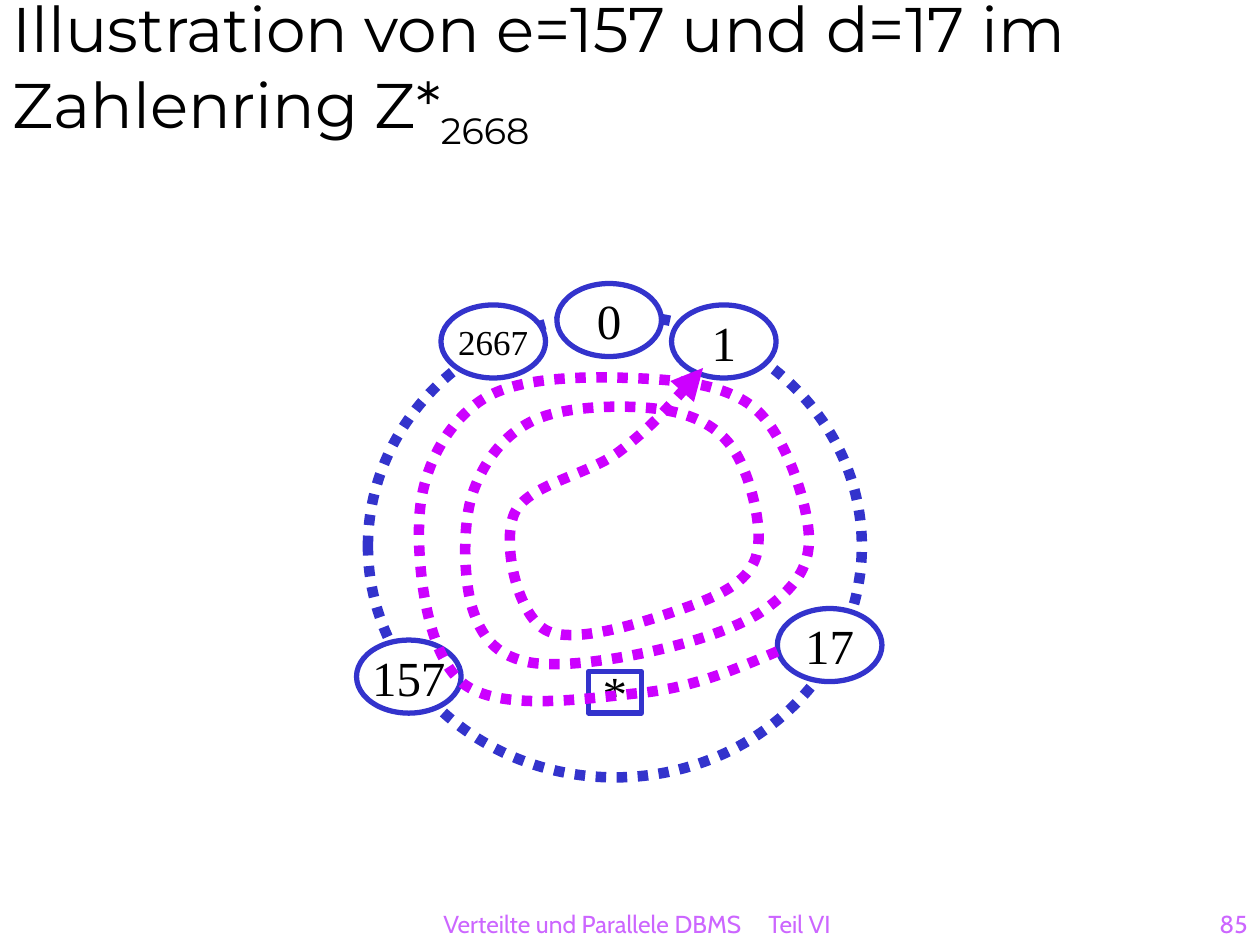
from dataclasses import dataclass

from pptx import Presentation
from pptx.dml.color import RGBColor
from pptx.enum.dml import MSO_LINE
from pptx.enum.shapes import MSO_SHAPE
from pptx.enum.text import MSO_ANCHOR, PP_ALIGN
from pptx.oxml.ns import qn
from pptx.util import Inches, Pt
from lxml.etree import SubElement

BLUE, MAGENTA, LILAC = "3333CC", "CC00FF", "CC66FF"
WHITE, BLACK = "FFFFFF", "000000"


@dataclass
class Node:
    label: str
    left: float
    top: float
    width: float = 0.83
    height: float = 0.58
    size: int = 28
    kind: MSO_SHAPE = MSO_SHAPE.OVAL


NODES = [
    Node("0", 4.42, 2.25),
    Node("1", 5.33, 2.42),
    Node("17", 6.17, 4.83),
    Node("157", 2.83, 5.08),
    Node("2667", 3.5, 2.42, size=20),
    Node("*", 4.67, 5.33, 0.42, 0.33, kind=MSO_SHAPE.RECTANGLE),
]

SPIRAL = [
    (6.17, 5.17), (5.08, 5.5), (3.67, 5.42), (3.33, 4.08), (3.83, 3.17),
    (5, 3), (6, 3.25), (6.42, 4.25), (6.08, 4.83), (5.17, 5.17),
    (4.17, 5.25), (3.75, 4.83), (3.75, 3.92), (4.25, 3.33), (5.25, 3.25),
    (5.83, 3.58), (6, 4.42), (5.42, 4.83), (4.33, 5), (4.08, 4.08),
    (4.92, 3.58), (5.58, 2.92),
]


def rgb(color: str) -> RGBColor:
    return RGBColor.from_string(color)


def style_line(sp, color: str, width: float, dotted: bool = False) -> None:
    sp.shadow.inherit = False
    sp.line.color.rgb = rgb(color)
    sp.line.width = Pt(width)
    if dotted:
        sp.line.dash_style = MSO_LINE.ROUND_DOT


def style_text(p, font: str, size: float, color: str, align=PP_ALIGN.LEFT) -> None:
    p.alignment = align
    for r in p.runs:
        r.font.name = font
        r.font.size = Pt(size)
        r.font.color.rgb = rgb(color)


def add_text(shapes, text: str, left: float, top: float, width: float,
             height: float, font: str, size: float, color: str,
             align=PP_ALIGN.LEFT):
    box = shapes.add_textbox(Inches(left), Inches(top), Inches(width), Inches(height))
    tf = box.text_frame
    tf.word_wrap = True
    tf.vertical_anchor = MSO_ANCHOR.BOTTOM
    p = tf.paragraphs[0]
    p.text = text
    style_text(p, font, size, color, align)
    return p


def add_shape(shapes, node: Node):
    return shapes.add_shape(node.kind, Inches(node.left), Inches(node.top),
                            Inches(node.width), Inches(node.height))


def add_node(shapes, node: Node) -> None:
    sp = add_shape(shapes, node)
    sp.fill.solid()
    sp.fill.fore_color.rgb = rgb(WHITE)
    style_line(sp, BLUE, 3)
    tf = sp.text_frame
    tf.text = node.label
    tf.word_wrap = False
    tf.vertical_anchor = MSO_ANCHOR.MIDDLE
    style_text(tf.paragraphs[0], "Times New Roman", node.size, BLACK, PP_ALIGN.CENTER)


def bezier_controls(knots: list) -> list:
    def tangent(i: int) -> tuple:
        return tuple((b - a) / 6 for a, b in zip(knots[i - 1], knots[i + 1]))

    def shift(i: int, sign: int) -> tuple:
        return tuple(k + sign * t for k, t in zip(knots[i], tangent(i)))

    def middle(a: tuple, b: tuple) -> tuple:
        return tuple((m + n) / 2 for m, n in zip(a, b))

    last = len(knots) - 1
    controls = []
    for i in range(last):
        if i == 0:
            second = shift(1, -1)
            first = middle(knots[0], second)
        elif i == last - 1:
            first = shift(i, 1)
            second = middle(first, knots[last])
        else:
            first, second = shift(i, 1), shift(i + 1, -1)
        controls.append((first, second))
    return controls


def add_curve(shapes, knots: list, color: str, width: float) -> None:
    points = [(Inches(x), Inches(y)) for x, y in knots]
    builder = shapes.build_freeform(*points[0])
    builder.add_line_segments(points[1:], close=False)
    sp = builder.convert_to_shape()
    segments = list(sp._element.iter(qn("a:lnTo")))
    for segment, controls in zip(segments, bezier_controls(knots)):
        segment.tag = qn("a:cubicBezTo")
        for place, (x, y) in enumerate(controls):
            pt = SubElement(segment, qn("a:pt"), x=str(Inches(x) - sp.left),
                            y=str(Inches(y) - sp.top))
            segment.insert(place, pt)
    sp.fill.background()
    style_line(sp, color, width, dotted=True)
    SubElement(sp.line._get_or_add_ln(), qn("a:tailEnd"), type="triangle")


def main() -> None:
    prs = Presentation()
    prs.slide_width, prs.slide_height = Inches(10), Inches(7.5)
    shapes = prs.slides.add_slide(prs.slide_layouts[6]).shapes

    footer = add_text(shapes, "Verteilte und Parallele DBMS\tTeil VI",
                      3.42, 7, 3.92, 0.5, "Cabin", 14, LILAC)
    tabs = SubElement(footer._p.get_or_add_pPr(), qn("a:tabLst"))
    SubElement(tabs, qn("a:tab"), pos=str(Inches(2.58)), algn="l")
    add_text(shapes, "85", 7.92, 7, 2.08, 0.5, "Cabin", 14, LILAC, PP_ALIGN.RIGHT)

    title = add_text(shapes, "Illustration von e=157 und d=17 im Zahlenring Z*",
                     0, 0, 10, 1.25, "Montserrat", 36, BLACK)
    r = title.add_run()
    r.text = "2668"
    style_text(title, "Montserrat", 36, BLACK)
    r.font._element.set("baseline", "-25000")

    ring = add_shape(shapes, Node("", 2.92, 2.5, 3.92, 3.67))
    ring.fill.background()
    style_line(ring, BLUE, 6, dotted=True)
    for node in NODES:
        add_node(shapes, node)
    add_curve(shapes, SPIRAL, MAGENTA, 6)
    prs.save("out.pptx")


if __name__ == "__main__":
    main()
